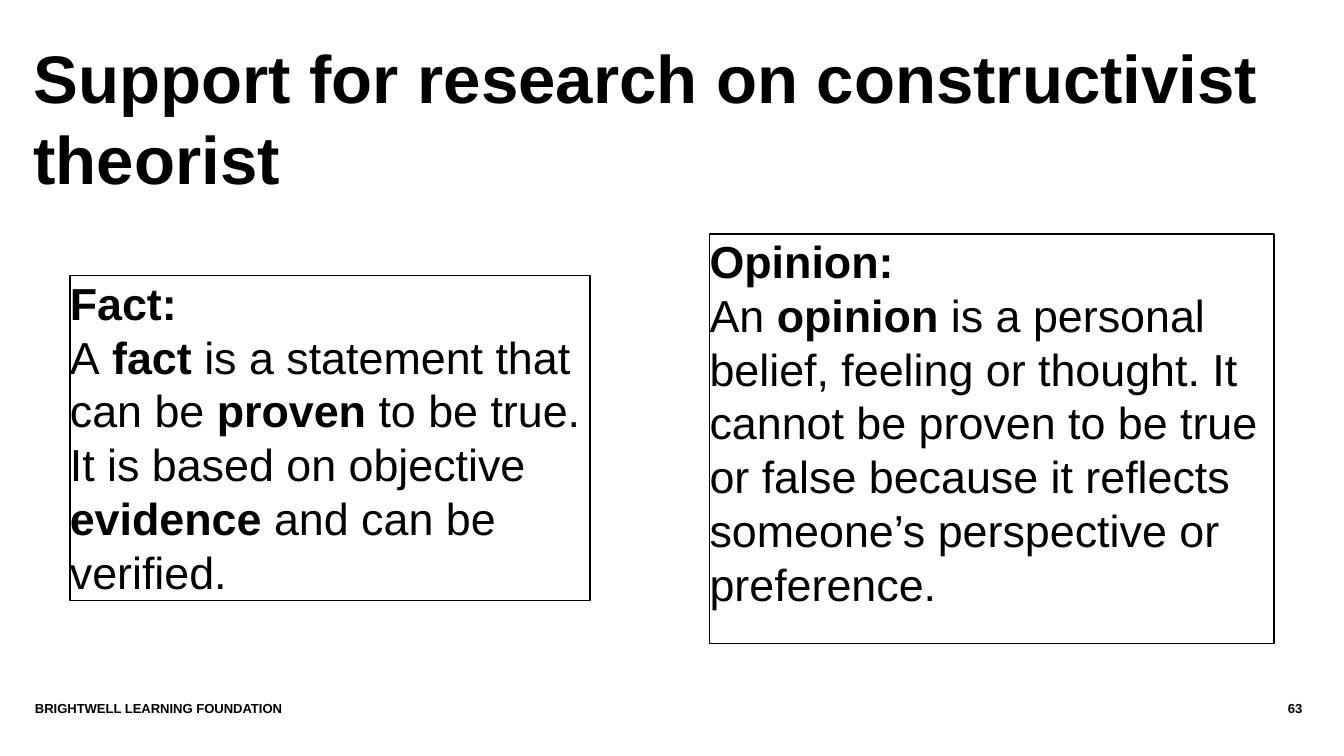
from dataclasses import dataclass

from pptx import Presentation
from pptx.dml.color import RGBColor
from pptx.enum.shapes import MSO_SHAPE
from pptx.enum.text import MSO_ANCHOR, MSO_AUTO_SIZE, PP_ALIGN
from pptx.util import Inches, Pt


@dataclass(frozen=True)
class Theme:
    font: str = "Arial"
    ink: RGBColor = RGBColor(0, 0, 0)
    paper: RGBColor = RGBColor(255, 255, 255)
    title_size: int = 36
    body_size: int = 24
    footer_size: int = 7
    outline: float = 0.75
    line_spacing: float = 1.0


THEME = Theme()
HARD_SPACE = chr(160)

# Asterisks enclose the bold words
FACT = ["*Fact:*",
        f"A{HARD_SPACE}*fact*{HARD_SPACE}is a statement that can be *proven* "
        "to be true. It is based on objective *evidence* and can be verified."]
OPINION = ["*Opinion:*",
           f"An{HARD_SPACE}*opinion*{HARD_SPACE}is a personal belief, feeling "
           "or thought. It cannot be proven to be true or false because it "
           "reflects someone’s perspective or preference."]


def prepare_frame(frame):
    """Wrap text from the top left corner, without margins."""
    frame.word_wrap = True
    frame.auto_size = MSO_AUTO_SIZE.NONE
    frame.vertical_anchor = MSO_ANCHOR.TOP
    frame.margin_left = frame.margin_top = 0
    frame.margin_right = frame.margin_bottom = 0


def format_para(para, align=PP_ALIGN.LEFT):
    para.alignment = align
    para.line_spacing = THEME.line_spacing
    para.space_before = Pt(0)


def format_span(span, size, bold=True):
    span.font.name = THEME.font
    span.font.size = Pt(size)
    span.font.bold = bold
    span.font.color.rgb = THEME.ink


def set_line(frame, text, size, align=PP_ALIGN.LEFT):
    """Fill a frame with one bold paragraph."""
    prepare_frame(frame)
    frame.text = text
    para = frame.paragraphs[0]
    format_para(para, align)
    format_span(para.runs[0], size)


def add_title(page, text):
    title = page.shapes.title
    title.left, title.top = Inches(0.25), Inches(0.27)
    title.width, title.height = Inches(9.23), Inches(0.76)
    set_line(title.text_frame, text, THEME.title_size)


def add_definition(page, left, top, width, height, paragraphs):
    """Add an outlined box with a heading and its explanation."""
    box = page.shapes.add_shape(MSO_SHAPE.RECTANGLE, Inches(left), Inches(top),
                                Inches(width), Inches(height))
    box.shadow.inherit = False
    box.fill.background()
    box.line.color.rgb = THEME.ink
    box.line.width = Pt(THEME.outline)
    frame = box.text_frame
    prepare_frame(frame)
    for index, text in enumerate(paragraphs):
        para = frame.paragraphs[0] if index == 0 else frame.add_paragraph()
        format_para(para)
        for position, part in enumerate(text.split("*")):
            if part:
                span = para.add_run()
                span.text = part
                format_span(span, THEME.body_size, bold=position % 2 == 1)


def add_footer(page, left, width, text, align=PP_ALIGN.LEFT):
    box = page.shapes.add_textbox(Inches(left), Inches(5.21),
                                  Inches(width), Inches(0.3))
    set_line(box.text_frame, text, THEME.footer_size, align)


def main():
    # Widescreen deck, 16 to 9
    deck = Presentation()
    deck.slide_width = Inches(10)
    deck.slide_height = Inches(10) * 9 // 16
    page = deck.slides.add_slide(deck.slide_layouts[5])
    page.background.fill.solid()
    page.background.fill.fore_color.rgb = THEME.paper

    add_title(page, "Support for research on constructivist theorist")

    # Footer line and page number
    add_footer(page, 0.26, 8.41, "BRIGHTWELL LEARNING FOUNDATION")
    add_footer(page, 8.7, 0.99, "63", PP_ALIGN.RIGHT)

    # Contrasting definitions
    add_definition(page, 0.52, 2.05, 3.87, 2.42, FACT)
    add_definition(page, 5.28, 1.74, 4.2, 3.05, OPINION)

    deck.save("out.pptx")


if __name__ == "__main__":
    main()
